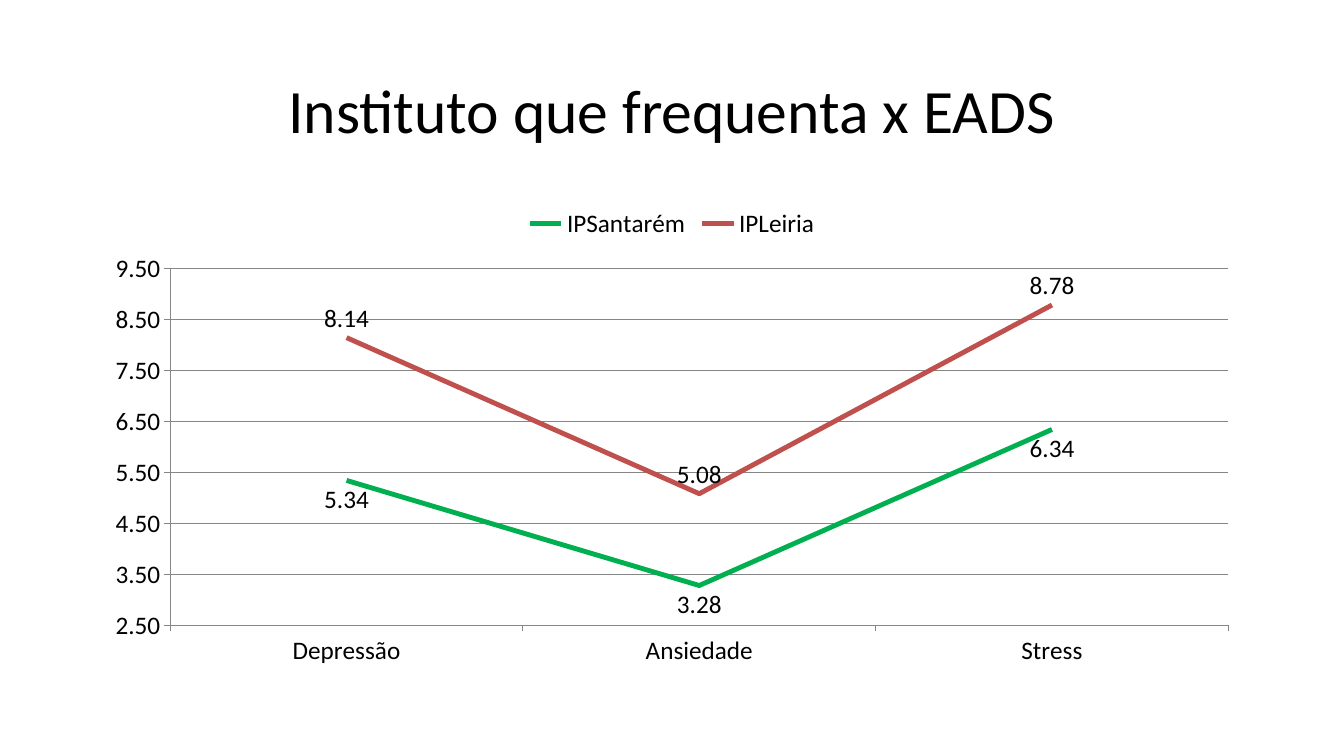
from dataclasses import dataclass

from pptx import Presentation
from pptx.chart.chart import Chart
from pptx.chart.data import CategoryChartData
from pptx.dml.color import RGBColor
from pptx.enum import chart as ch, text
from pptx.util import Pt

FONT = "Calibri"
HUES = {"ink": "000000", "green": "00B050", "red": "C0504D", "grid": "868686"}
CATS = ("Depressão", "Ansiedade", "Stress")


@dataclass
class Line:
    name: str
    vals: tuple[float, ...]
    hue: str
    side: ch.XL_LABEL_POSITION


LINES = (
    Line("IPSantarém", (5.34, 3.28, 6.34), "green", ch.XL_LABEL_POSITION.BELOW),
    Line("IPLeiria", (8.14, 5.08, 8.78), "red", ch.XL_LABEL_POSITION.ABOVE),
)


def color(name: str) -> RGBColor:
    return RGBColor.from_string(HUES[name])


def set_font(font, size: float) -> None:
    font.name = FONT
    font.size = Pt(size)
    font.color.rgb = color("ink")


def style_line(chart: Chart, index: int, line: Line) -> None:
    plot = chart.plots[0].series[index]
    plot.smooth = False
    plot.marker.style = ch.XL_MARKER_STYLE.NONE
    plot.format.line.color.rgb = color(line.hue)
    plot.format.line.width = Pt(3.5)
    tags = plot.data_labels
    tags.show_value = True
    tags.position = line.side
    tags.number_format = "0.00"
    tags.number_format_is_linked = False
    set_font(tags.font, 18)


def style_axes(chart: Chart) -> None:
    value = chart.value_axis
    value.minimum_scale, value.maximum_scale = 2.5, 9.5
    value.major_unit = 1
    value.has_major_gridlines = True
    value.tick_labels.number_format = "0.00"
    value.tick_labels.number_format_is_linked = False
    for axis in (value, chart.category_axis):
        axis.major_tick_mark = ch.XL_TICK_MARK.OUTSIDE
        axis.minor_tick_mark = ch.XL_TICK_MARK.NONE
        set_font(axis.tick_labels.font, 18)
    for part in (value, chart.category_axis, value.major_gridlines):
        part.format.line.color.rgb = color("grid")
        part.format.line.width = Pt(0.75)


def add_title(slide, words: str) -> None:
    title = slide.shapes.title
    title.left, title.top = Pt(66), Pt(28.8)
    title.width, title.height = Pt(828), Pt(104.4)
    title.text_frame.text = words
    title.text_frame.vertical_anchor = text.MSO_ANCHOR.MIDDLE
    para = title.text_frame.paragraphs[0]
    para.alignment = text.PP_ALIGN.CENTER
    para.line_spacing = 0.9
    set_font(para.font, 44)


def add_lines(slide) -> None:
    data = CategoryChartData(number_format="0.00")
    data.categories = CATS
    for line in LINES:
        data.add_series(line.name, line.vals)
    chart = slide.shapes.add_chart(
        ch.XL_CHART_TYPE.LINE, Pt(66), Pt(139.7), Pt(828), Pt(342.7), data
    ).chart
    set_font(chart.font, 18)
    chart.has_title = False
    chart.plots[0].vary_by_categories = False
    chart.has_legend = True
    chart.legend.position = ch.XL_LEGEND_POSITION.TOP
    chart.legend.include_in_layout = False
    set_font(chart.legend.font, 18)
    style_axes(chart)
    for index, line in enumerate(LINES):
        style_line(chart, index, line)


def main() -> None:
    deck = Presentation()
    deck.slide_width, deck.slide_height = Pt(960), Pt(540)
    # Title Only layout
    slide = deck.slides.add_slide(deck.slide_layouts[5])
    # Heading
    add_title(slide, "Instituto que frequenta x EADS")
    # Line chart of the two institutes
    add_lines(slide)
    deck.save("out.pptx")


if __name__ == "__main__":
    main()
